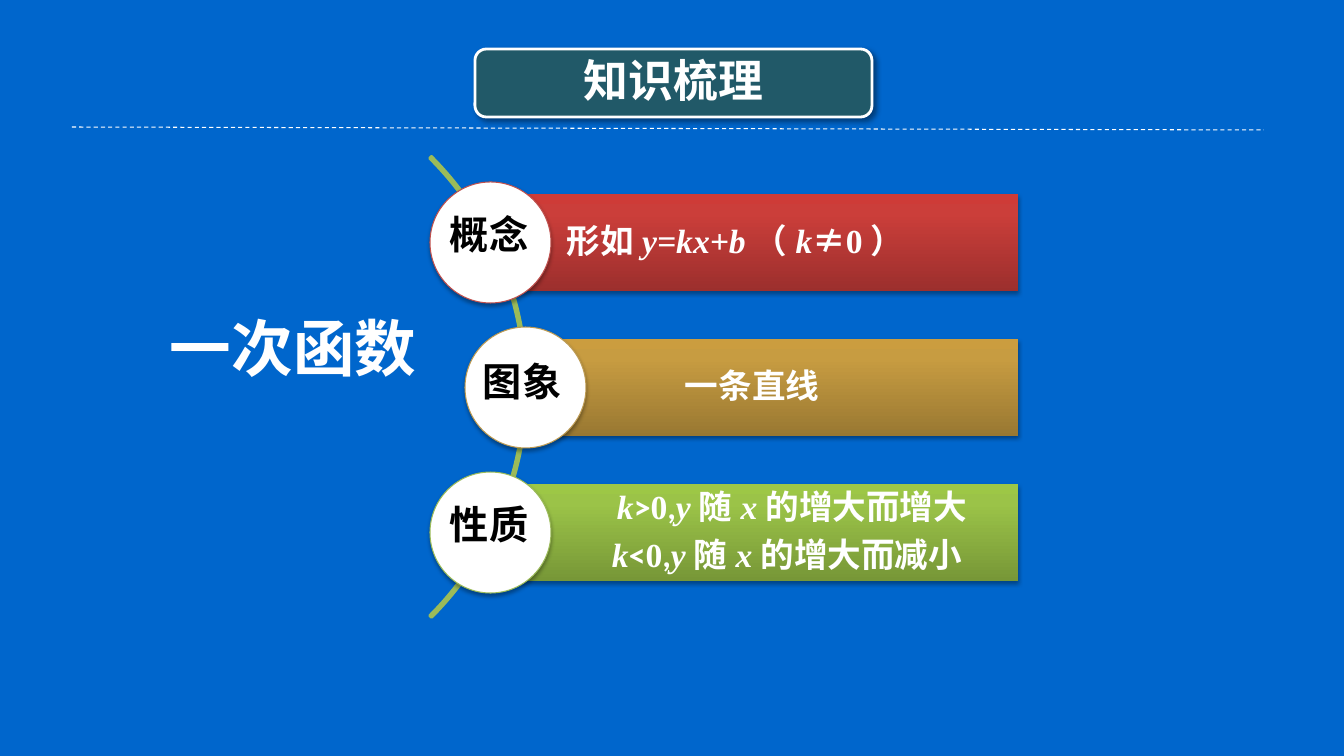
from lxml import etree
from pptx import Presentation
from pptx import util as u
from pptx.dml.color import RGBColor
from pptx.enum import dml, shapes, text
from pptx.oxml import ns

COLORS = {
    "background": "0066CC",
    "title": "215968",
    "white": "FFFFFF",
    "black": "000000",
    "arc": "9BBB59",
}
LATIN, MATH, SYMBOL = "Calibri", "Times New Roman", "Noto Sans CJK SC"
TITLE_SHADOW = (40, 4, 3, 45)
ROW_SHADOW = (35, 3.1, 1.8, 90)


def px(length):
    return u.Emu(round(length * 914400 / 100.8))


def rgb(color):
    return RGBColor.from_string(COLORS.get(color, color))


def add_xml(parent, tag, **attributes):
    values = {key: str(value) for key, value in attributes.items()}
    return etree.SubElement(parent, ns.qn(tag), values)


class Board:
    def __init__(self, deck):
        self.slide = deck.slides.add_slide(deck.slide_layouts[6])
        self.slide.background.fill.solid()
        self.slide.background.fill.fore_color.rgb = rgb("background")

    def shape(self, kind, box, fill=None, line=None, width=0.75, shadow=None):
        item = self.slide.shapes.add_shape(kind, *map(px, box))
        item.shadow.inherit = False
        if isinstance(fill, tuple):
            self.gradient(item, fill)
        elif fill:
            item.fill.solid()
            item.fill.fore_color.rgb = rgb(fill)
        else:
            item.fill.background()
        if line:
            item.line.color.rgb = rgb(line)
            item.line.width = u.Pt(width)
        else:
            item.line.fill.background()
        if shadow:
            self.shadow(item, *shadow)
        return item

    def gradient(self, item, colors):
        item.fill.gradient()
        item.fill.gradient_angle = 90
        stops = item.element.spPr.find(ns.qn("a:gradFill")).find(ns.qn("a:gsLst"))
        stops.clear()
        for position, color in zip((0, 80, 100), colors):
            stop = add_xml(stops, "a:gs", pos=position * 1000)
            add_xml(stop, "a:srgbClr", val=color)

    def shadow(self, item, opacity, blur, distance, angle):
        effects = item.element.spPr.find(ns.qn("a:effectLst"))
        outer = add_xml(effects, "a:outerShdw", blurRad=u.Pt(blur),
                        dist=u.Pt(distance), dir=angle * 60000, rotWithShape=0)
        color = add_xml(outer, "a:srgbClr", val=COLORS["black"])
        add_xml(color, "a:alpha", val=opacity * 1000)

    def paragraph(self, paragraph, runs, size, color):
        paragraph.font.size = u.Pt(size)
        paragraph.font.bold = True
        paragraph.font.color.rgb = rgb(color)
        for wording, font, italic in runs:
            run = paragraph.add_run()
            run.text = wording
            run.font.name = font
            run.font.italic = italic

    def fill_text(self, item, lines, size, insets, align):
        frame = item.text_frame
        frame.word_wrap = True
        frame.vertical_anchor = text.MSO_ANCHOR.MIDDLE
        frame.margin_left, frame.margin_top, frame.margin_right, frame.margin_bottom = map(px, insets)
        for index, (indent, runs) in enumerate(lines):
            paragraph = frame.add_paragraph() if index else frame.paragraphs[0]
            paragraph.alignment = align
            paragraph.line_spacing = 0.9
            properties = paragraph._p.get_or_add_pPr()
            properties.set("marL", str(px(indent)))
            add_xml(add_xml(properties, "a:spcAft"), "a:spcPct", val=35000)
            self.paragraph(paragraph, runs, size, "white")

    def label(self, wording, box, size, color):
        frame = self.slide.shapes.add_textbox(*map(px, box)).text_frame
        frame.word_wrap = True
        frame.auto_size = text.MSO_AUTO_SIZE.SHAPE_TO_FIT_TEXT
        self.paragraph(frame.paragraphs[0], [(wording, LATIN, False)], size, color)

    def dashed_line(self, start, end):
        line = self.slide.shapes.add_connector(
            shapes.MSO_CONNECTOR.STRAIGHT, *map(px, start + end))
        line.line.color.rgb = rgb("white")
        line.line.width = u.Pt(0.75)
        line.line.dash_style = dml.MSO_LINE.DASH
        add_xml(line.element.spPr, "a:effectLst")


def plain(wording):
    return wording, LATIN, False


def variable(wording):
    return wording, MATH, True


def number(wording):
    return wording, MATH, False


def property_line(indent, sign, trend):
    return indent, [variable("k"), plain(sign), number("0"), plain(","),
                    variable("y"), plain("随"), variable("x"), plain(trend)]


CONCEPT = [(0, [plain("形如"), variable("y=kx+b"), plain("（"), variable("k"),
                ("≠", SYMBOL, False), number("0"), plain("）")])]
GRAPH = [(83, [plain("一条直线")])]
PROPERTIES = [property_line(50, ">", "的增大而增大"),
              property_line(45, "<", "的增大而减小")]

ROWS = [
    ("概念", CONCEPT, 490, ("9C2F2D", "CB3E3A", "CE3B37"), "C0504D", (440, 205)),
    ("图象", GRAPH, 525, ("997832", "C79C41", "CB9D3F"), "BD9B53", (473, 352)),
    ("性质", PROPERTIES, 490, ("779737", "9BC348", "9DC746"), "9BBB59", (440, 495)),
]
ROW_TOP, ROW_PITCH, ROW_HEIGHT, ROW_RIGHT = 194, 145, 97, 1018
CIRCLE = 121


def main():
    deck = Presentation()
    deck.slide_width, deck.slide_height = px(1344), px(756)
    board = Board(deck)

    title = board.shape(shapes.MSO_SHAPE.ROUNDED_RECTANGLE, (475, 49, 397, 68),
                        "title", "white", 2, TITLE_SHADOW)
    board.fill_text(title, [(0, [plain("知识梳理")])], 32, (13, 13, 13, 13),
                    text.PP_ALIGN.CENTER)
    board.dashed_line((72, 127), (1264, 130))

    arc = board.shape(shapes.MSO_SHAPE.BLOCK_ARC, (-125, 61, 652, 652), line="arc", width=2)
    for index, value in enumerate((189, 27, 0.004)):
        arc.adjustments[index] = value

    for index, (topic, lines, left, gradient, outline, corner) in enumerate(ROWS):
        top = ROW_TOP + index * ROW_PITCH
        bar = board.shape(shapes.MSO_SHAPE.RECTANGLE,
                          (left, top, ROW_RIGHT - left, ROW_HEIGHT),
                          gradient, shadow=ROW_SHADOW)
        board.fill_text(bar, lines, 24, (77, 7, 7, 7), text.PP_ALIGN.LEFT)
        board.shape(shapes.MSO_SHAPE.OVAL,
                    (left - CIRCLE // 2, top - (CIRCLE - ROW_HEIGHT) // 2, CIRCLE, CIRCLE),
                    "white", outline, shadow=ROW_SHADOW)
        board.label(topic, corner + (109, 57), 28, "black")

    board.label("一次函数", (160, 305, 281, 85), 44, "white")
    deck.save("out.pptx")


if __name__ == "__main__":
    main()
